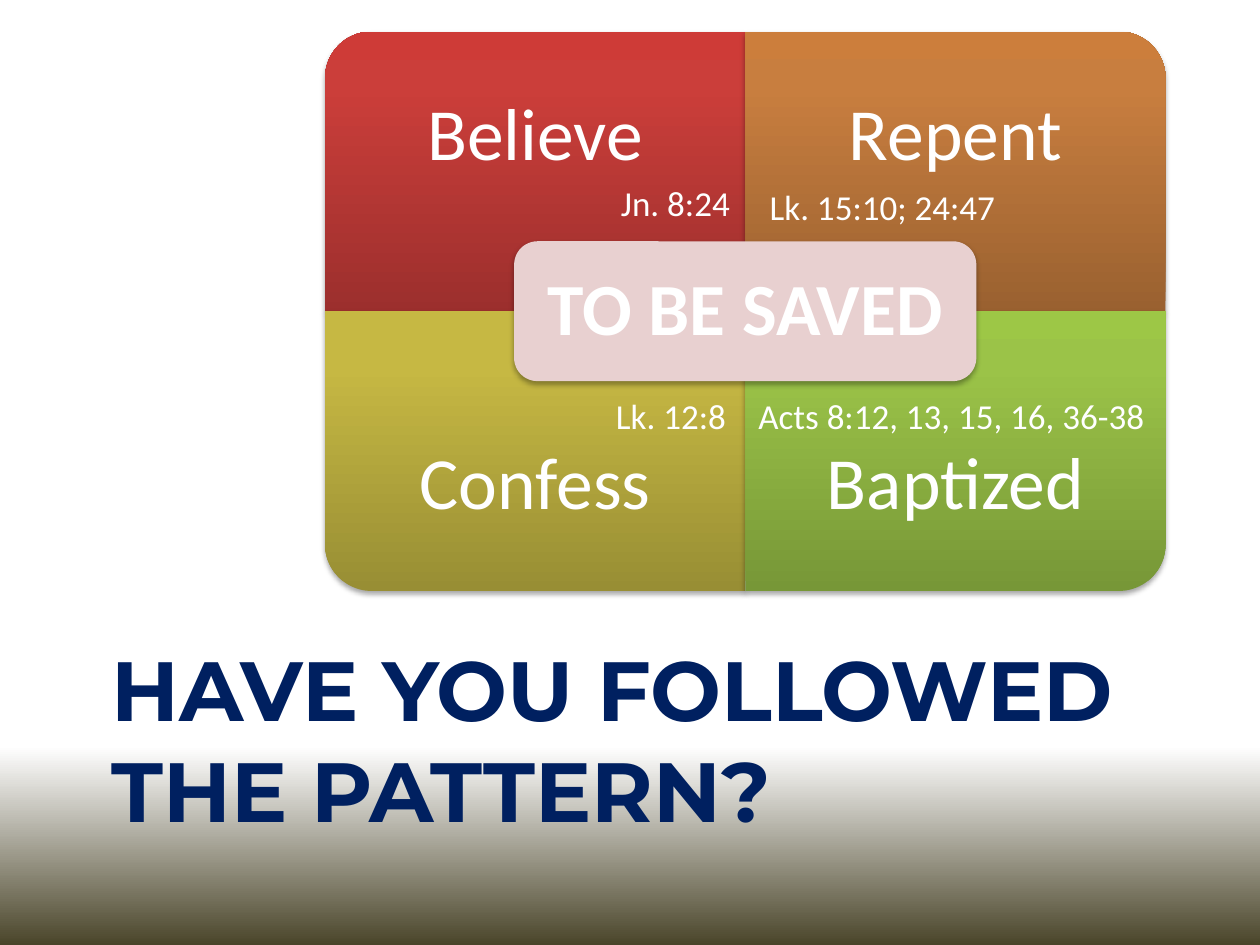
from dataclasses import dataclass

from lxml import etree
from pptx import Presentation
from pptx.dml.color import RGBColor
from pptx.enum.shapes import MSO_SHAPE as Shape
from pptx.enum.text import MSO_ANCHOR as Anchor, MSO_AUTO_SIZE as AutoSize, PP_ALIGN as Align
from pptx.oxml.ns import qn
from pptx.util import Inches, Pt


@dataclass(frozen=True)
class Theme:
    title_font: str = "Montserrat"
    body_font: str = "Calibri"
    title_size: int = 48
    label_size: int = 42
    verse_size: int = 20
    navy: str = "002060"
    white: str = "FFFFFF"
    olive: str = "4A452A"
    pink: str = "E8D0D0"
    black: str = "000000"
    red: tuple = ("9C2F2D", "CB3E3A", "CE3B37")
    orange: tuple = ("9A6130", "C87E3F", "CC7E3C")
    yellow: tuple = ("988E34", "C6B843", "C9BB41")
    green: tuple = ("779737", "9BC348", "9DC746")


THEME = Theme()


def add_color(parent, color):
    return etree.SubElement(parent, qn("a:srgbClr"), val=color)


def set_gradient(fill, element, stops, angle):
    fill.gradient()
    gradient = next(element.iter(qn("a:gradFill")))
    gradient.set("rotWithShape", "0")
    stop_list = gradient.find(qn("a:gsLst"))
    for stop in list(stop_list):
        stop_list.remove(stop)
    for position, color in stops:
        stop = etree.SubElement(stop_list, qn("a:gs"), pos=str(position * 1000))
        add_color(stop, color)
    linear = gradient.find(qn("a:lin"))
    linear.set("ang", str(angle * 60000))
    linear.set("scaled", "0")


def add_shadow(shape):
    shape.shadow.inherit = False
    effects = next(shape.element.iter(qn("a:effectLst")))
    shadow = etree.SubElement(
        effects, qn("a:outerShdw"), blurRad=str(Pt(3.1)), dist=str(Pt(1.8)),
        dir="5400000", rotWithShape="0")
    etree.SubElement(add_color(shadow, THEME.black), qn("a:alpha"), val="35000")


def add_text(shapes, box, text, size, font=THEME.body_font, color=THEME.white,
             bold=False, wrap=True):
    text_box = shapes.add_textbox(*map(Inches, box))
    frame = text_box.text_frame
    frame.word_wrap = wrap
    run = frame.paragraphs[0].add_run()
    run.text = text
    run.font.name = font
    run.font.size = Pt(size)
    run.font.bold = bold
    run.font.color.rgb = RGBColor.from_string(color)
    return frame, run


def add_label(shapes, box, text, inset, bold=False):
    frame, _ = add_text(shapes, box, text, THEME.label_size, bold=bold)
    frame.vertical_anchor = Anchor.MIDDLE
    frame.margin_left = frame.margin_right = Inches(inset)
    frame.margin_top = frame.margin_bottom = Inches(inset)
    paragraph = frame.paragraphs[0]
    paragraph.alignment = Align.CENTER
    paragraph.line_spacing = 0.9


def add_quadrant(shapes, box, text, colors, rotation, text_offset):
    left, top, width, height = box
    across, down = (height, width) if rotation % 180 else (width, height)
    shape = shapes.add_shape(
        Shape.ROUND_1_RECTANGLE,
        Inches(left + (width - across) / 2), Inches(top + (height - down) / 2),
        Inches(across), Inches(down))
    shape.rotation = rotation
    set_gradient(shape.fill, shape.element, zip((0, 80, 100), colors), 270)
    shape.line.fill.background()
    add_shadow(shape)
    add_label(shapes, (left, top + text_offset, width, height * 0.75), text, 0.33)


def add_center(shapes, box, text):
    left, top, width, height = box
    shape = shapes.add_shape(Shape.ROUNDED_RECTANGLE, *map(Inches, box))
    shape.fill.solid()
    shape.fill.fore_color.rgb = RGBColor.from_string(THEME.pink)
    shape.line.fill.background()
    add_shadow(shape)
    pad = 0.05
    add_label(shapes, (left + pad, top + pad, width - 2 * pad, height - 2 * pad),
              text, 0.17, bold=True)


def add_matrix(slide, box):
    left, top, width, height = box
    shapes = slide.shapes.add_group_shape().shapes
    half_width, half_height = width / 2, height / 2
    quadrants = (
        ("Believe", THEME.red, 270, 0, 0),
        ("Repent", THEME.orange, 0, 1, 0),
        ("Confess", THEME.yellow, 180, 0, 1),
        ("Baptized", THEME.green, 90, 1, 1),
    )
    for text, colors, rotation, column, row in quadrants:
        quadrant = (left + column * half_width, top + row * half_height,
                    half_width, half_height)
        add_quadrant(shapes, quadrant, text, colors, rotation, row * half_height / 4)
    center_width, center_height = width * 0.55, height / 4
    add_center(shapes, (left + (width - center_width) / 2,
                        top + (height - center_height) / 2,
                        center_width, center_height), "TO BE SAVED")


def add_verses(slide, box):
    left, top = box[:2]
    verses = (
        ("Jn. 8:24", 2.25, 1.14, 1.07),
        ("Lk. 15:10; 24:47", 3.43, 1.17, 2.01),
        ("Lk. 12:8", 2.21, 2.83, 1.08),
        ("Acts 8:12, 13, 15, 16, 36-38", 3.34, 2.83, 3.29),
    )
    for text, across, down, width in verses:
        frame, _ = add_text(slide.shapes, (left + across, top + down, width, 0.44),
                            text, THEME.verse_size, wrap=False)
        frame.auto_size = AutoSize.SHAPE_TO_FIT_TEXT


def add_title(slide, box):
    _, run = add_text(slide.shapes, box, "HAVE YOU FOLLOWED THE PATTERN?",
                      THEME.title_size, THEME.title_font, THEME.navy, bold=True)
    outline = etree.Element(qn("a:ln"), w=str(Pt(0.75)))
    add_color(etree.SubElement(outline, qn("a:solidFill")), THEME.white)
    run.font.fill
    next(slide.element.iter(qn("a:rPr"))).insert(0, outline)


def add_pattern_slide(presentation):
    slide = presentation.slides.add_slide(presentation.slide_layouts[6])
    set_gradient(slide.background.fill, slide.element,
                 ((0, THEME.white), (79, THEME.white), (100, THEME.olive)), 90)
    matrix_box = (2.58, 0.25, 6.67, 4.44)
    add_title(slide, (0.79, 5.01, 8.5, 1.49))
    add_matrix(slide, matrix_box)
    add_verses(slide, matrix_box)


def main():
    presentation = Presentation()
    presentation.slide_width = Inches(10)
    presentation.slide_height = Inches(7.5)
    add_pattern_slide(presentation)
    presentation.save("out.pptx")


if __name__ == "__main__":
    main()
